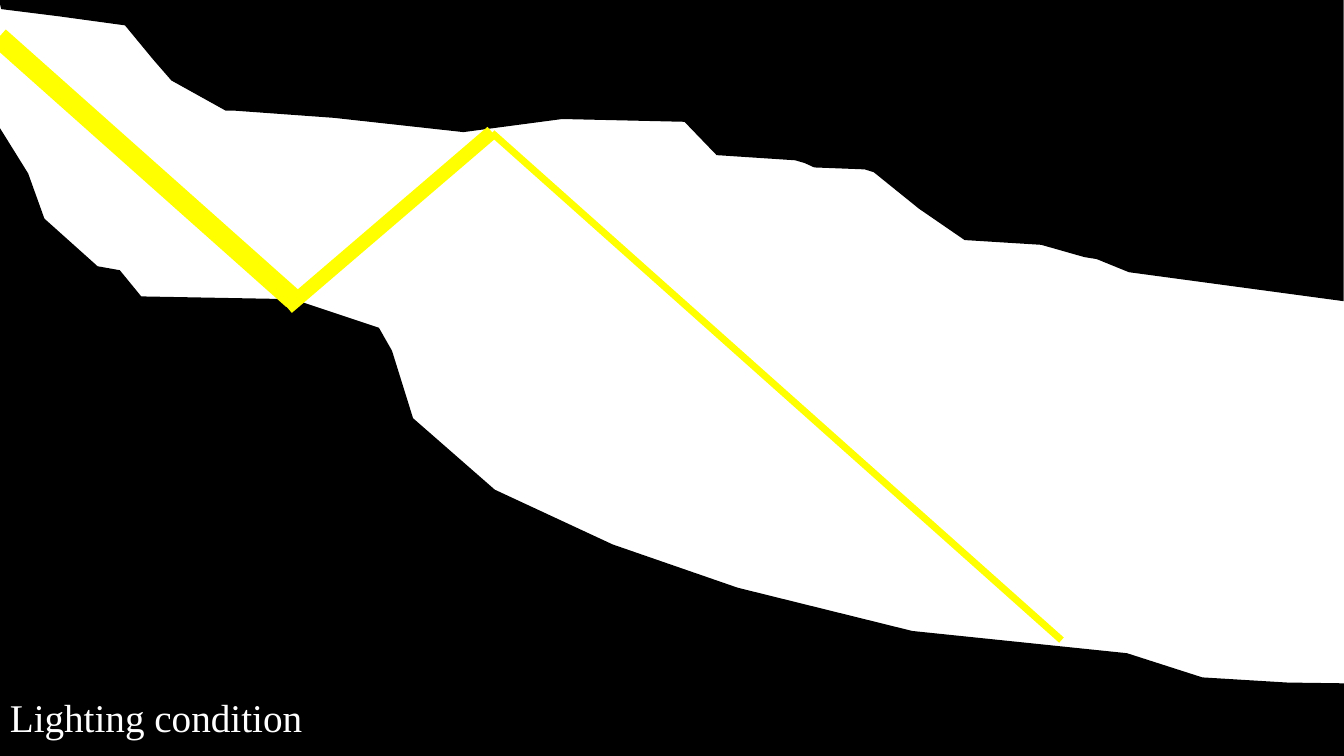
from dataclasses import dataclass

from lxml.etree import SubElement
from pptx import Presentation
from pptx.dml.color import RGBColor
from pptx.enum.shapes import MSO_CONNECTOR
from pptx.oxml.ns import qn
from pptx.slide import Slide
from pptx.util import Cm, Pt

COLORS = {"rock": "000000", "light": "FFFF00", "label": "FFFFFF"}

Point = tuple[float, float]


@dataclass(frozen=True)
class Rock:
    outline: list[Point]  # cm


@dataclass(frozen=True)
class Ray:
    start: Point  # cm
    end: Point  # cm
    width: float  # pt


FLOOR = Rock([
    (0, 3.23), (0.71, 4.37), (1.12, 5.51), (2.46, 6.71), (3.02, 6.81),
    (3.56, 7.47), (7.39, 7.54), (9.55, 8.26), (9.88, 8.84), (10.41, 10.54),
    (12.47, 12.34), (15.44, 13.72), (18.59, 14.81), (22.99, 15.9),
    (28.4, 16.46), (30.3, 17.07), (32.44, 17.2), (33.91, 17.22),
    (33.91, 19.51), (0, 19.51),
])
CEILING = Rock([
    (-0.03, -0.03), (33.86, -0.03), (33.86, 7.59), (28.45, 6.86),
    (27.64, 6.53), (27.33, 6.48), (26.24, 6.17), (24.31, 6.05),
    (23.16, 5.26), (22.02, 4.34), (21.79, 4.27), (20.52, 4.22),
    (20.28, 4.11), (20.04, 4.04), (18.06, 3.91), (17.25, 3.07), (14.17, 3),
    (11.68, 3.33), (8.41, 2.97), (5.92, 2.79), (5.69, 2.79), (4.32, 2.03),
    (3.86, 1.5), (3.15, 0.64), (1.47, 0.41), (0.03, 0.23),
])
RAYS = [
    Ray((-0.03, 0.94), (7.39, 7.54), 15),
    Ray((12.4, 3.35), (26.75, 16.13), 5),
    Ray((7.24, 7.75), (12.4, 3.33), 10),
]


def rgb(name: str) -> RGBColor:
    return RGBColor.from_string(COLORS[name])


def draw_rock(s: Slide, rock: Rock) -> None:
    points = [(Cm(x), Cm(y)) for x, y in rock.outline]
    builder = s.shapes.build_freeform(*points[0])
    builder.add_line_segments(points[1:], close=True)
    sp = builder.convert_to_shape()
    sp.shadow.inherit = False
    sp.fill.solid()
    sp.fill.fore_color.rgb = rgb("rock")
    sp.line.fill.background()


def draw_ray(s: Slide, ray: Ray) -> None:
    ends = [Cm(v) for v in ray.start + ray.end]
    sp = s.shapes.add_connector(MSO_CONNECTOR.STRAIGHT, *ends)
    sp.line.color.rgb = rgb("light")
    sp.line.width = Pt(ray.width)
    SubElement(sp._element.spPr, qn("a:effectLst"))


def draw_label(s: Slide, text: str) -> None:
    sp = s.shapes.add_textbox(Cm(0), Cm(17.48), Cm(25.4), Cm(2.01))
    tf = sp.text_frame
    tf.word_wrap = True
    tf.text = text
    p = tf.paragraphs[0]
    p.line_spacing = 0.9
    p.space_before = Pt(10)
    r = p.runs[0]
    r.font.name = "Times New Roman"
    r.font.size = Pt(28)
    r.font.color.rgb = rgb("label")


def main() -> None:
    prs = Presentation()
    prs.slide_width, prs.slide_height = Cm(33.87), Cm(19.05)
    s = prs.slides.add_slide(prs.slide_layouts[6])

    # Cave walls
    for rock in (FLOOR, CEILING):
        draw_rock(s, rock)

    # Light bouncing down the cave, weaker after each reflection
    for ray in RAYS:
        draw_ray(s, ray)

    # Caption
    draw_label(s, "Lighting condition")

    prs.save("out.pptx")


if __name__ == "__main__":
    main()
